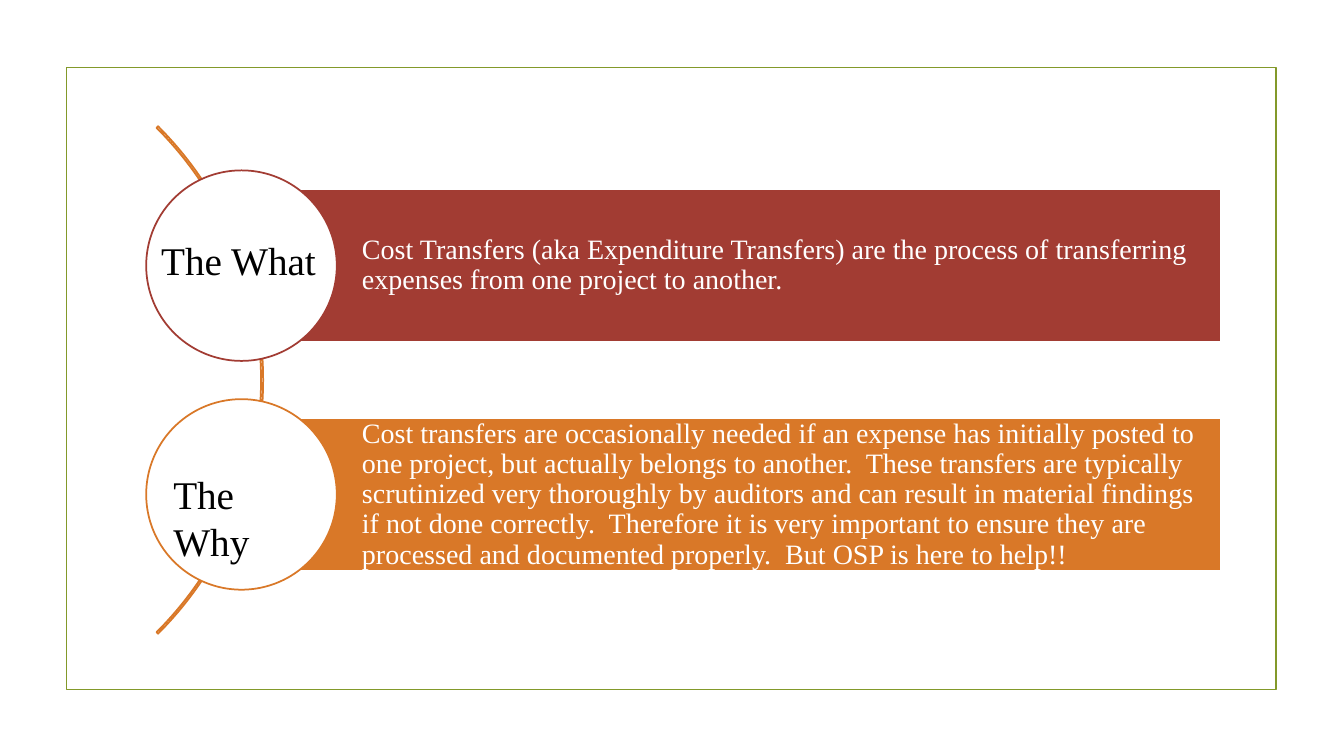
from dataclasses import dataclass

import pptx
import pptx.dml.color
import pptx.enum.shapes
import pptx.enum.text
import pptx.util

EMU_PER_PX = 9144  # 100 px to the inch
SHAPES = pptx.enum.shapes.MSO_SHAPE


@dataclass(frozen=True)
class Theme:
    font: str = "Times New Roman"
    white: str = "FFFFFF"
    black: str = "000000"
    green: str = "83992A"
    red: str = "A23C33"
    orange: str = "D97828"
    body_size: int = 20
    label_size: int = 28
    line_width: float = 1.25


@dataclass(frozen=True)
class Area:
    left: int
    top: int
    width: int
    height: int

    def emu(self) -> list[int]:
        return [px(n) for n in (self.left, self.top, self.width, self.height)]


@dataclass(frozen=True)
class Topic:
    label: str
    label_area: Area
    wrap_label: bool
    color: str
    text: str


THEME = Theme()
FRAME = Area(66, 67, 1200, 617)
ARC = Area(-451, 21, 712, 712)
BAR_LEFT, BAR_WIDTH, BAR_HEIGHT = 239, 972, 151
CIRCLE_SIZE = 189
FIRST_BAR_TOP, TOPIC_PITCH = 188, 227

TOPICS = [
    Topic(
        "The What", Area(150, 230, 174, 57), False, THEME.red,
        "Cost Transfers (aka Expenditure Transfers) are the process of "
        "transferring expenses from one project to another.",
    ),
    Topic(
        "The Why", Area(162, 462, 162, 57), True, THEME.orange,
        "Cost transfers are occasionally needed if an expense has initially "
        "posted to one project, but actually belongs to another.  These "
        "transfers are typically scrutinized very thoroughly by auditors and "
        "can result in material findings if not done correctly.  Therefore it "
        "is very important to ensure they are processed and documented "
        "properly.  But OSP is here to help!!",
    ),
]


def px(length: int) -> int:
    return length * EMU_PER_PX


def rgb(color: str) -> pptx.dml.color.RGBColor:
    return pptx.dml.color.RGBColor.from_string(color)


def add_outline(page, kind, area: Area, line: str, fill: str | None = None):
    """Add a preset shape with a thin line and an optional fill."""
    shape = page.shapes.add_shape(kind, *area.emu())
    shape.shadow.inherit = False
    if fill is None:
        shape.fill.background()
    else:
        shape.fill.solid()
        shape.fill.fore_color.rgb = rgb(fill)
    shape.line.color.rgb = rgb(line)
    shape.line.width = pptx.util.Pt(THEME.line_width)
    return shape


def write(shape, text: str, size: int, color: str):
    """Set left-aligned text and return its paragraph."""
    shape.text_frame.text = text
    para = shape.text_frame.paragraphs[0]
    para.alignment = pptx.enum.text.PP_ALIGN.LEFT
    font = para.runs[0].font
    font.name = THEME.font
    font.size = pptx.util.Pt(size)
    font.color.rgb = rgb(color)
    return para


def add_topic(page, topic: Topic, bar_top: int) -> None:
    bar_area = Area(BAR_LEFT, bar_top, BAR_WIDTH, BAR_HEIGHT)
    bar = add_outline(page, SHAPES.RECTANGLE, bar_area, THEME.white, topic.color)
    frame = bar.text_frame
    frame.word_wrap = True
    frame.vertical_anchor = pptx.enum.text.MSO_ANCHOR.MIDDLE
    frame.margin_left = px(120)
    frame.margin_top = frame.margin_right = frame.margin_bottom = px(6)
    para = write(bar, topic.text, THEME.body_size, THEME.white)
    para.line_spacing = 0.9

    circle_area = Area(
        BAR_LEFT - CIRCLE_SIZE // 2,
        bar_top + (BAR_HEIGHT - CIRCLE_SIZE) // 2,
        CIRCLE_SIZE,
        CIRCLE_SIZE,
    )
    add_outline(page, SHAPES.OVAL, circle_area, topic.color, THEME.white)


def add_label(page, topic: Topic) -> None:
    box = page.shapes.add_textbox(*topic.label_area.emu())
    box.text_frame.word_wrap = topic.wrap_label
    box.text_frame.auto_size = pptx.enum.text.MSO_AUTO_SIZE.SHAPE_TO_FIT_TEXT
    write(box, topic.label, THEME.label_size, THEME.black)


def main() -> None:
    deck = pptx.Presentation()
    deck.slide_width, deck.slide_height = px(1333), px(750)
    page = deck.slides.add_slide(deck.slide_layouts[6])

    add_outline(page, SHAPES.RECTANGLE, FRAME, THEME.green)
    arc = add_outline(page, SHAPES.BLOCK_ARC, ARC, THEME.orange)
    for index, value in enumerate((189, 27, 0.003)):
        arc.adjustments[index] = value

    for index, topic in enumerate(TOPICS):
        add_topic(page, topic, FIRST_BAR_TOP + index * TOPIC_PITCH)
    for topic in TOPICS:
        add_label(page, topic)

    deck.save("out.pptx")


if __name__ == "__main__":
    main()
